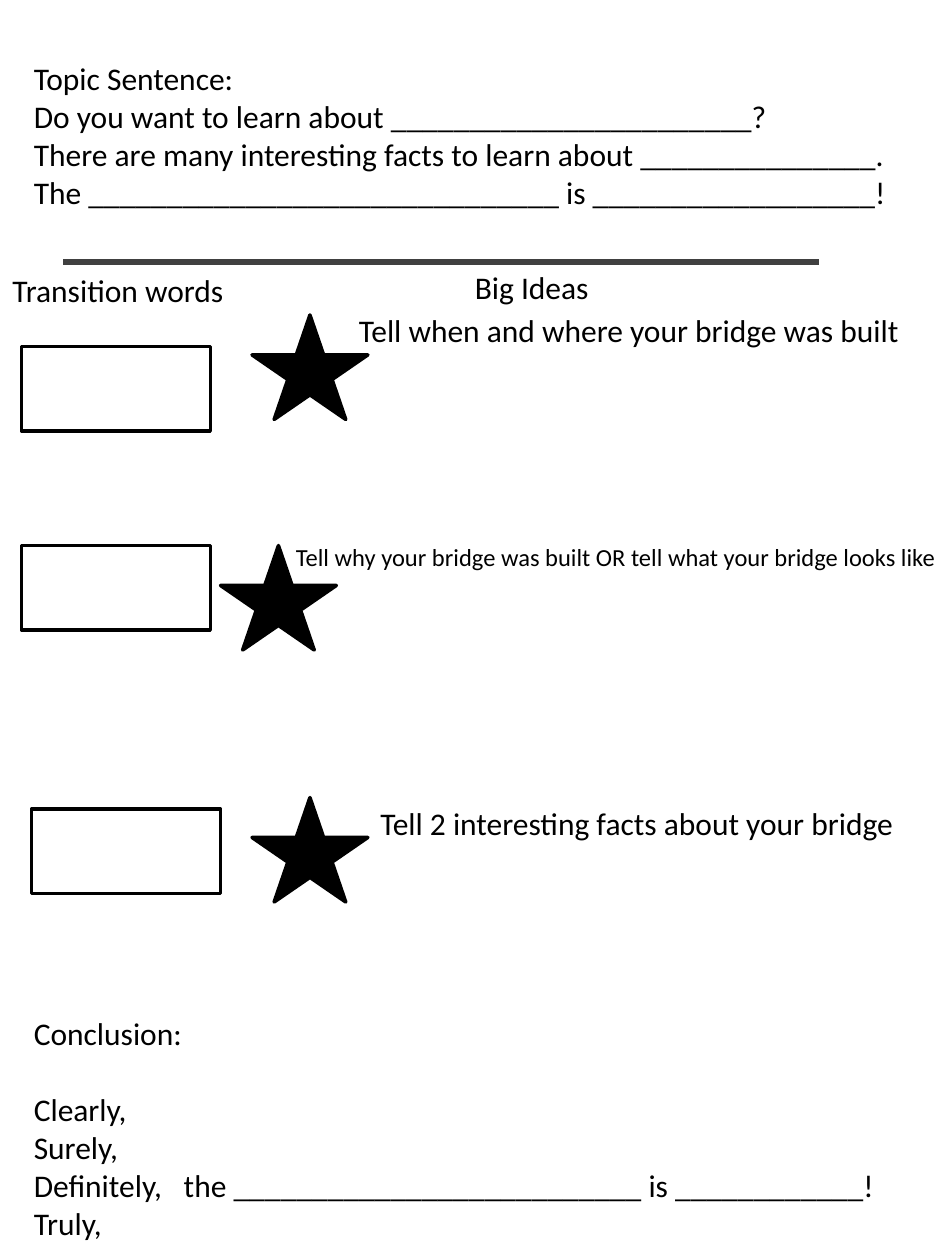
from lxml import etree
from pptx import Presentation
from pptx import util as u
from pptx.dml.color import RGBColor
from pptx.enum import shapes, text
from pptx.oxml import ns

PX = 9144  # EMU per px, 100 px to the inch
BLACK = RGBColor(0, 0, 0)
WHITE = RGBColor(255, 255, 255)
GRAY = RGBColor(0x40, 0x40, 0x40)
FRAME = {"word_wrap": True, "auto_size": text.MSO_AUTO_SIZE.SHAPE_TO_FIT_TEXT}

TOPIC = [
    "Topic Sentence:",
    "Do you want to learn about _______________________?",
    "There are many interesting facts to learn about _______________.",
    "The ______________________________ is __________________!",
]
CLOSE = [
    "Conclusion:",
    "Clearly,",
    "Surely,",
    "Definitely,\tthe __________________________ is ____________!",
    "Truly,",
]
# Each row: box left and top, star left and top, text left, top, height, size
ROWS = [
    (17, 275, 200, 250, 275, 242, 40, 18, "Tell when and where your bridge was built"),
    (17, 433, 175, 433, 225, 425, 34, 14,
     "Tell why your bridge was built OR tell what your bridge looks like"),
    (25, 642, 200, 633, 292, 633, 40, 18, "Tell 2 interesting facts about your bridge"),
]


def px(*vals):
    return [u.Emu(v * PX) for v in vals]


def put(obj, vals):
    for key, val in vals.items():
        setattr(obj, key, val)


def add_tab(para, pos):
    tabs = etree.SubElement(para._p.get_or_add_pPr(), ns.qn("a:tabLst"))
    etree.SubElement(tabs, ns.qn("a:tab"), pos=str(pos * PX), algn="l")


def add_text(slide, area, lines, size=18):
    frame = slide.shapes.add_textbox(*px(*area)).text_frame
    put(frame, FRAME)
    for i, line in enumerate(lines):
        para = frame.paragraphs[0] if i == 0 else frame.add_paragraph()
        para.text = line
        font = para.runs[0].font
        put(font, {"name": "Calibri", "size": u.Pt(size)})
        font.color.rgb = BLACK
        if "\t" in line:
            add_tab(para, 119)
    return frame


def add_form(slide, kind, area, fill):
    form = slide.shapes.add_shape(kind, *px(*area))
    form.shadow.inherit = False
    form.fill.solid()
    form.fill.fore_color.rgb = fill
    form.line.color.rgb = BLACK
    form.line.width = u.Pt(2)


def add_rule(slide, ends):
    rule = slide.shapes.add_connector(shapes.MSO_CONNECTOR.STRAIGHT, *px(*ends))
    rule.line.color.rgb = GRAY
    rule.line.width = u.Pt(3)
    etree.SubElement(rule._element.spPr, ns.qn("a:effectLst"))


def add_row(slide, row):
    box_x, box_y, star_x, star_y, left, top, high, size, words = row
    kind = shapes.MSO_SHAPE
    add_form(slide, kind.RECTANGLE, (box_x, box_y, 150, 67), WHITE)
    add_form(slide, kind.STAR_5_POINT, (star_x, star_y, 92, 83), BLACK)
    add_text(slide, (left, top, 533, high), [words], size)


def main():
    deck = Presentation()
    deck.slide_width, deck.slide_height = px(750, 1000)
    slide = deck.slides.add_slide(deck.slide_layouts[6])

    # Topic sentence and rule
    add_rule(slide, (50, 208, 650, 208))
    add_text(slide, (17, 42, 700, 131), TOPIC)

    # Column heads and idea rows
    add_text(slide, (0, 210, 192, 40), ["Transition words"])
    add_text(slide, (367, 208, 192, 40), ["Big Ideas"])
    for row in ROWS:
        add_row(slide, row)

    # Conclusion, with one line of space below its heading
    frame = add_text(slide, (17, 800, 700, 192), CLOSE)
    frame.paragraphs[0].space_after = u.Pt(22)

    deck.save("out.pptx")


if __name__ == "__main__":
    main()
